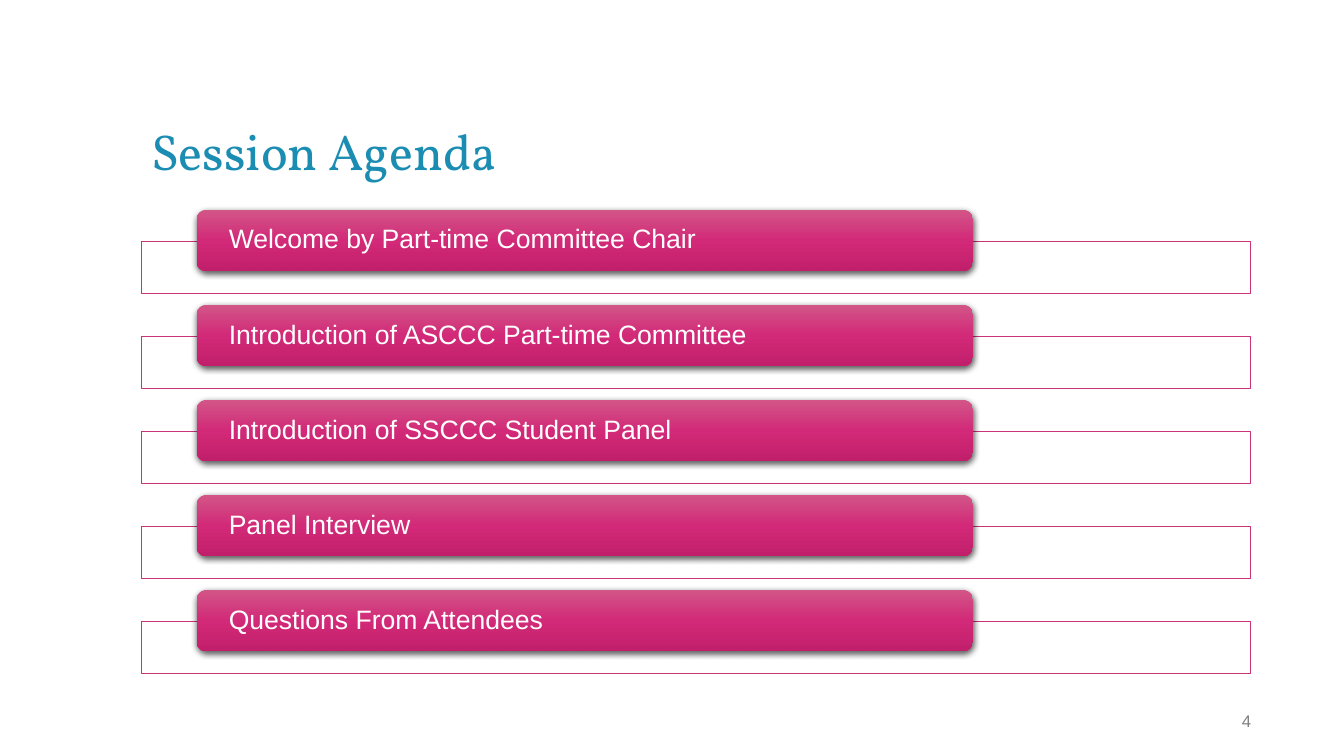
"""Build the session agenda slide: a title, five agenda bars and the slide number."""
from copy import deepcopy
from dataclasses import dataclass

from lxml.etree import SubElement
from pptx import Presentation
from pptx.dml.color import RGBColor
from pptx.enum.shapes import MSO_SHAPE as Shape
from pptx.enum.text import MSO_ANCHOR as Anchor, PP_ALIGN as Align
from pptx.oxml.ns import qn
from pptx.util import Emu, Inches, Pt

COLUMN = ROW = Inches(0.1)
BAR_PITCH = 9.43
BAR_GRADIENT = ((0, "D25688"), (0.5, "D22A78"), (1, "C11F6B"))
AGENDA = (
    "Welcome by Part-time Committee Chair",
    "Introduction of ASCCC Part-time Committee",
    "Introduction of SSCCC Student Panel",
    "Panel Interview",
    "Questions From Attendees",
)


@dataclass(frozen=True)
class Area:
    column: float
    row: float
    columns: float
    rows: float

    def down(self, rows: float) -> "Area":
        return Area(self.column, self.row + rows, self.columns, self.rows)

    def box(self) -> tuple:
        return (Emu(round(self.column * COLUMN)), Emu(round(self.row * ROW)),
                Emu(round(self.columns * COLUMN)), Emu(round(self.rows * ROW)))


TITLE = Area(14, 4, 109.9, 14.5)
NUMBER = Area(114.1, 69.5, 10, 4)
FRAME = Area(14, 23.9, 110, 5.2)
BAR = Area(19.5, 20.8, 77, 6.1)


def color(value: str) -> RGBColor:
    return RGBColor.from_string(value)


def write(shape, text: str, *, size: float, fill: str, font: str = "Arial",
          align=Align.LEFT, anchor=Anchor.MIDDLE, insets=(0.1, 0.05, 0.1, 0.05),
          spacing: float = 1.0, after: float = 0) -> None:
    frame = shape.text_frame
    frame.word_wrap = True
    frame.vertical_anchor = anchor
    (frame.margin_left, frame.margin_top,
     frame.margin_right, frame.margin_bottom) = map(Inches, insets)
    paragraph = frame.paragraphs[0]
    paragraph.alignment = align
    paragraph.line_spacing = spacing
    paragraph.space_after = Pt(after)
    run = paragraph.add_run()
    run.text = text
    run.font.name = font
    run.font.size = Pt(size)
    run.font.color.rgb = color(fill)


def add_frame(slide, area: Area) -> None:
    shape = slide.shapes.add_shape(Shape.RECTANGLE, *area.box())
    shape.shadow.inherit = False
    shape.fill.solid()
    shape.fill.fore_color.rgb = color("FFFFFF")
    white = shape._element.spPr.find(f"{qn('a:solidFill')}/{qn('a:srgbClr')}")
    SubElement(white, qn("a:alpha"), val="90000")
    shape.line.color.rgb = color("CA3279")
    shape.line.width = Pt(0.5)


def add_bar(slide, area: Area, text: str) -> None:
    shape = slide.shapes.add_shape(Shape.ROUNDED_RECTANGLE, *area.box())
    shape.line.fill.background()
    shape.fill.gradient()
    shape.fill.gradient_angle = 270
    properties = shape._element.spPr
    stop_list = properties.find(f"{qn('a:gradFill')}/{qn('a:gsLst')}")
    stop_list.append(deepcopy(stop_list[0]))
    for stop, (position, value) in zip(shape.fill.gradient_stops, BAR_GRADIENT):
        stop.position = position
        stop.color.rgb = color(value)
    shape.shadow.inherit = False
    shadow = SubElement(properties.find(qn("a:effectLst")), qn("a:outerShdw"),
                        blurRad=str(Pt(4.5)), dist=str(Pt(1.5)), dir="5400000",
                        algn="ctr", rotWithShape="0")
    black = SubElement(shadow, qn("a:srgbClr"), val="000000")
    SubElement(black, qn("a:alpha"), val="63000")
    write(shape, text, size=19, fill="FFFFFF", insets=(0.29, 0, 0.29, 0), spacing=0.9)


def main() -> None:
    presentation = Presentation()
    presentation.slide_width = Inches(13.33)
    presentation.slide_height = Inches(7.5)
    slide = presentation.slides.add_slide(presentation.slide_layouts[6])

    title = slide.shapes.add_textbox(*TITLE.box())
    write(title, "Session Agenda", size=36, fill="1B8DB2", font="Vollkorn",
          anchor=Anchor.BOTTOM, spacing=0.9)
    number = slide.shapes.add_textbox(*NUMBER.box())
    write(number, "4", size=12, fill="808080", align=Align.RIGHT,
          insets=(0.1, 0.05, 0, 0.05), after=6)

    for index, topic in enumerate(AGENDA):
        add_frame(slide, FRAME.down(index * BAR_PITCH))
        add_bar(slide, BAR.down(index * BAR_PITCH), topic)

    presentation.save("out.pptx")


if __name__ == "__main__":
    main()
